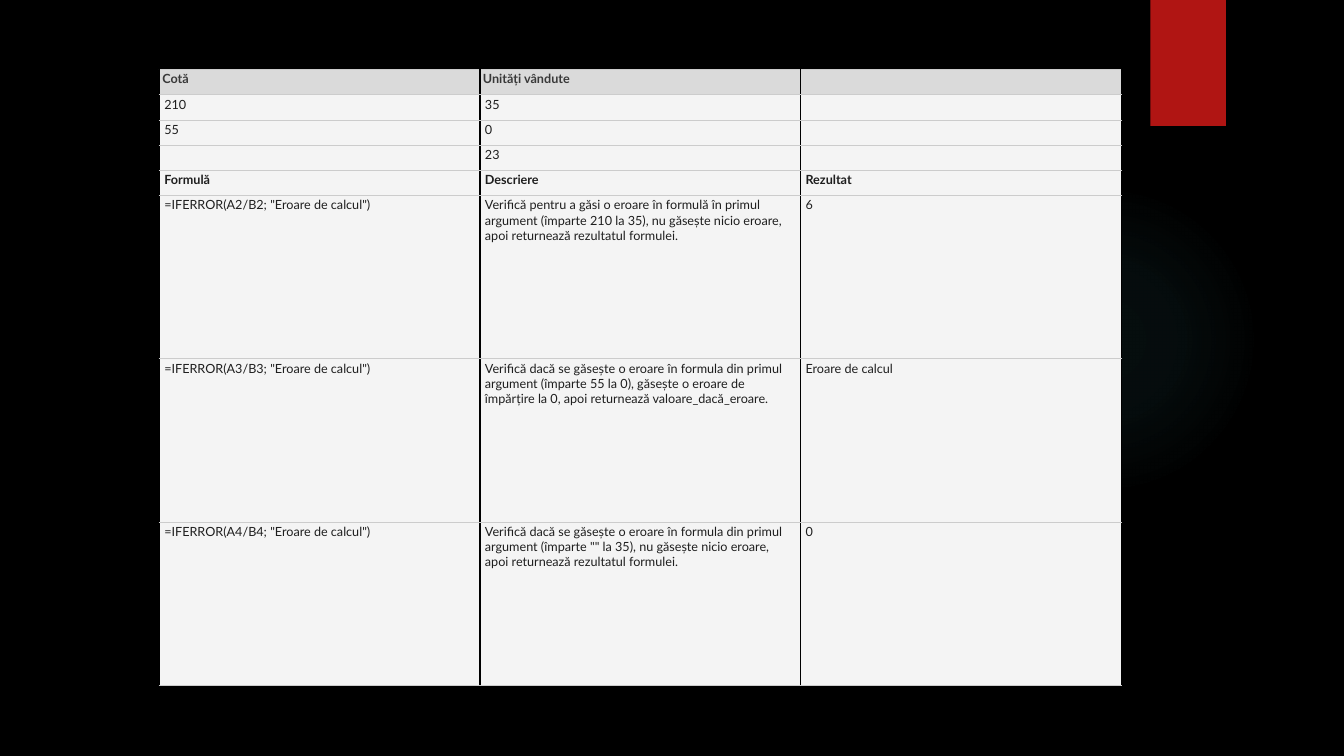
from pptx import Presentation
from pptx.dml.color import RGBColor
from pptx.enum.shapes import MSO_SHAPE
from pptx.oxml import parse_xml
from pptx.oxml.ns import nsdecls
from pptx.util import Inches, Pt

OVAL, RECTANGLE = MSO_SHAPE.OVAL, MSO_SHAPE.RECTANGLE

ROWS = [
    ("Cotă", "Unități vândute", ""),
    ("210", "35", ""),
    ("55", "0", ""),
    ("", "23", ""),
    ("Formulă", "Descriere", "Rezultat"),
    ('=IFERROR(A2/B2; "Eroare de calcul")',
     "Verifică pentru a găsi o eroare în formulă în primul argument (împarte 210 la 35), "
     "nu găsește nicio eroare, apoi returnează rezultatul formulei.",
     "6"),
    ('=IFERROR(A3/B3; "Eroare de calcul")',
     "Verifică dacă se găsește o eroare în formula din primul argument (împarte 55 la 0), "
     "găsește o eroare de împărțire la 0, apoi returnează valoare_dacă_eroare.",
     "Eroare de calcul"),
    ('=IFERROR(A4/B4; "Eroare de calcul")',
     'Verifică dacă se găsește o eroare în formula din primul argument (împarte "" la 35), '
     "nu găsește nicio eroare, apoi returnează rezultatul formulei.",
     "0"),
]
BOLD_ROWS = (0, 4)
FIRST_TALL_ROW = 5
SHORT_ROW, TALL_ROW = 0.25, 1.62
COLUMN_WIDTH = 3.18
TABLE_LEFT, TABLE_TOP = 1.58, 0.69
FONT_SIZE = 9
GLOW_STOPS = [(0, 7), (36, 6), (69, 0)]  # position and opacity, percent


def rgb(value):
    return RGBColor.from_string(value)


def add_plain_shape(slide, kind, left, top, width, height):
    shape = slide.shapes.add_shape(
        kind, Inches(left), Inches(top), Inches(width), Inches(height))
    shape.shadow.inherit = False
    shape.line.fill.background()
    return shape


def add_glow(slide):
    glow = add_plain_shape(slide, OVAL, 9.41, 1.83, 3.08, 3.08)
    glow.fill.gradient()
    stops = "".join(
        f'<a:gs pos="{position * 1000}"><a:srgbClr val="50B9C1">'
        f'<a:alpha val="{opacity * 1000}"/></a:srgbClr></a:gs>'
        for position, opacity in GLOW_STOPS)
    properties = glow._element.spPr
    properties.replace(properties.find("{*}gradFill"), parse_xml(
        f'<a:gradFill {nsdecls("a")}><a:gsLst>{stops}</a:gsLst><a:path path="circle">'
        '<a:fillToRect l="50000" t="50000" r="50000" b="50000"/></a:path></a:gradFill>'))


def add_ribbon(slide):
    ribbon = add_plain_shape(slide, RECTANGLE, 11.41, 0, 0.75, 1.25)
    ribbon.fill.solid()
    ribbon.fill.fore_color.rgb = rgb("B01513")
    ribbon._element.spPr.find("{*}effectLst").append(parse_xml(
        f'<a:outerShdw {nsdecls("a")} blurRad="{Pt(3)}" dist="{Pt(2)}" dir="5400000">'
        '<a:srgbClr val="000000"><a:alpha val="45000"/></a:srgbClr></a:outerShdw>'))


def format_cell(cell, text, is_header, is_bold):
    cell.text = text
    cell.margin_left = Inches(0.03 if is_header else 0.05)
    cell.margin_right = Inches(0.05)
    cell.margin_top = cell.margin_bottom = Inches(0.02)
    cell.fill.solid()
    cell.fill.fore_color.rgb = rgb("DADADA" if is_header else "F4F4F4")
    for index, side in enumerate(("lnT", "lnB")):
        cell._tc.tcPr.insert(index, parse_xml(
            f'<a:{side} {nsdecls("a")} w="{Pt(0.75)}"><a:solidFill>'
            f'<a:srgbClr val="CCCCCC"/></a:solidFill></a:{side}>'))
    paragraph = cell.text_frame.paragraphs[0]
    font = paragraph.font
    font.name, font.size, font.bold = "Lato", Pt(FONT_SIZE), is_bold
    font.color.rgb = rgb("393939" if is_header else "1E1E1E")
    if not text:  # keeps empty cells from stretching their row
        paragraph._p.get_or_add_endParaRPr().set("sz", str(FONT_SIZE * 100))


def add_formula_table(slide):
    heights = [SHORT_ROW if index < FIRST_TALL_ROW else TALL_ROW
               for index in range(len(ROWS))]
    column_count = len(ROWS[0])
    table = slide.shapes.add_table(
        len(ROWS), column_count, Inches(TABLE_LEFT), Inches(TABLE_TOP),
        Inches(COLUMN_WIDTH * column_count), Inches(sum(heights))).table
    table.first_row = table.horz_banding = False
    table_properties = table._tbl.tblPr
    table_properties.remove(table_properties.find("{*}tableStyleId"))
    for column in table.columns:
        column.width = Inches(COLUMN_WIDTH)
    for row_index, (texts, height) in enumerate(zip(ROWS, heights)):
        table.rows[row_index].height = Inches(height)
        for column_index, text in enumerate(texts):
            format_cell(table.cell(row_index, column_index), text,
                        row_index == 0, row_index in BOLD_ROWS)


def main():
    presentation = Presentation()
    presentation.slide_width = Inches(13.33)
    presentation.slide_height = Inches(7.5)
    slide = presentation.slides.add_slide(presentation.slide_layouts[6])
    slide.background.fill.solid()
    slide.background.fill.fore_color.rgb = rgb("000000")
    add_glow(slide)
    add_ribbon(slide)
    add_formula_table(slide)
    presentation.save("out.pptx")


if __name__ == "__main__":
    main()
